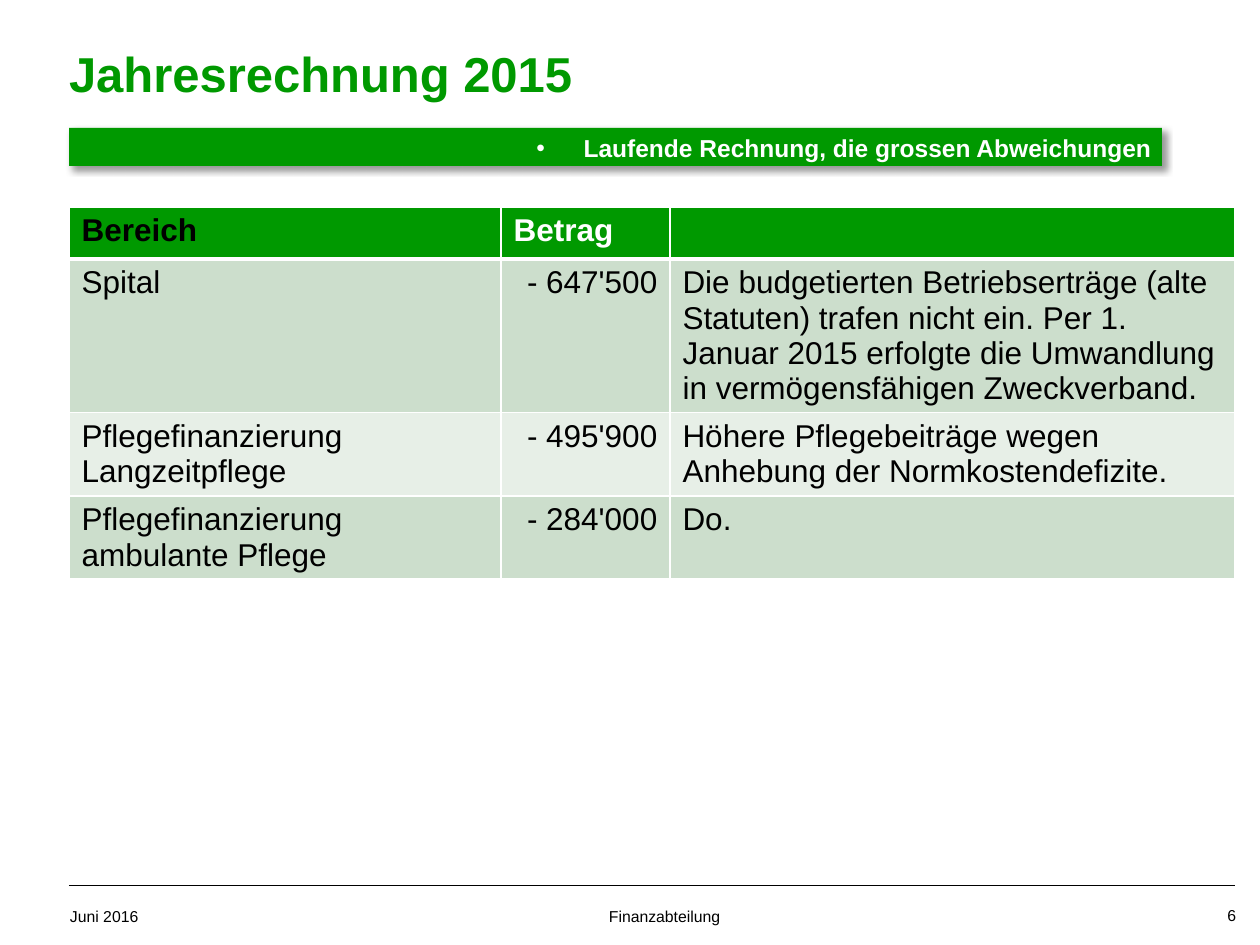
import pptx
import pptx.dml.color
import pptx.enum.shapes
import pptx.enum.text
import pptx.oxml
import pptx.oxml.ns
import pptx.util

PX = 914400 / 126
FONT = "Arial"
COLOURS = {
    "green": "009900",
    "band_dark": "CCDECC",
    "band_light": "E7EFE7",
    "black": "000000",
    "white": "FFFFFF",
}
ALIGN = pptx.enum.text.PP_ALIGN
ANCHOR = pptx.enum.text.MSO_ANCHOR
COLUMN_WIDTHS = [432, 169, 565]
ROW_HEIGHT = 52
ROWS = [
    ("Bereich", "Betrag", ""),
    ("Spital", "- 647'500",
     "Die budgetierten Betriebserträge (alte Statuten) trafen nicht ein. "
     "Per 1. Januar 2015 erfolgte die Umwandlung in vermögensfähigen Zweckverband."),
    ("Pflegefinanzierung Langzeitpflege", "- 495'900",
     "Höhere Pflegebeiträge wegen Anhebung der Normkostendefizite."),
    ("Pflegefinanzierung ambulante Pflege", "- 284'000", "Do."),
]


def px(length):
    return pptx.util.Emu(round(length * PX))


def rgb(name):
    return pptx.dml.color.RGBColor.from_string(COLOURS[name])


def xml(markup):
    """Parse one element of the drawing namespace."""
    tag, rest = markup.split(" ", 1)
    return pptx.oxml.parse_xml(f"{tag} {pptx.oxml.ns.nsdecls('a')} {rest}")


def write(frame, text, *, size, colour="black", bold=False, align=ALIGN.LEFT):
    frame.text = text
    paragraph = frame.paragraphs[0]
    paragraph.alignment = align
    paragraph.space_before = pptx.util.Pt(0)
    font = paragraph.runs[0].font
    font.name, font.size, font.bold = FONT, pptx.util.Pt(size), bold
    font.color.rgb = rgb(colour)


def set_frame(frame, insets, anchor=ANCHOR.TOP):
    frame.word_wrap = True
    frame.auto_size = pptx.enum.text.MSO_AUTO_SIZE.NONE
    frame.vertical_anchor = anchor
    (frame.margin_left, frame.margin_top,
     frame.margin_right, frame.margin_bottom) = map(px, insets)


def place(shape, left, top, width, height):
    shape.left, shape.top = px(left), px(top)
    shape.width, shape.height = px(width), px(height)


def add_title(slide):
    title = slide.shapes.title
    place(title, 69, 24, 1082, 98)
    set_frame(title.text_frame, (0, 6, 13, 6), ANCHOR.MIDDLE)
    write(title.text_frame, "Jahresrechnung 2015", size=28, colour="green", bold=True)


def add_subtitle_bar(slide):
    bar = slide.placeholders[1]
    place(bar, 69, 128, 1093, 38)
    bar.fill.solid()
    bar.fill.fore_color.rgb = rgb("green")
    bar._element.spPr.append(xml(
        '<a:effectLst ><a:outerShdw blurRad="50800" dist="38100" dir="2700000" '
        'algn="tl" rotWithShape="0"><a:srgbClr val="000000"><a:alpha val="40000"/>'
        '</a:srgbClr></a:outerShdw></a:effectLst>'))
    set_frame(bar.text_frame, (0, 5, 10, 0))
    properties = bar.text_frame.paragraphs[0]._p.get_or_add_pPr()
    properties.set("marL", "0")
    properties.set("indent", "0")
    properties.append(xml("<a:buNone />"))
    write(bar.text_frame, "Laufende Rechnung, die grossen Abweichungen",
          size=14, colour="white", bold=True, align=ALIGN.RIGHT)


def set_borders(cell, **widths):
    """Draw white borders, 1 pt unless a side is given another width."""
    properties = cell._tc.get_or_add_tcPr()
    for position, side in enumerate("LRTB"):
        width = pptx.util.Pt(widths.get(side, 1))
        properties.insert(position, xml(
            f'<a:ln{side} w="{width}"><a:solidFill><a:srgbClr val="{COLOURS["white"]}"/>'
            f'</a:solidFill></a:ln{side}>'))


def add_deviations_table(slide):
    table = slide.shapes.add_table(
        len(ROWS), len(COLUMN_WIDTHS), px(69), px(207),
        px(sum(COLUMN_WIDTHS)), px(ROW_HEIGHT * len(ROWS))).table
    for column, width in zip(table.columns, COLUMN_WIDTHS):
        column.width = px(width)
    for r, texts in enumerate(ROWS):
        table.rows[r].height = px(ROW_HEIGHT)
        header = r == 0
        band = "green" if header else "band_dark" if r % 2 else "band_light"
        for c, text in enumerate(texts):
            cell = table.cell(r, c)
            cell.fill.solid()
            cell.fill.fore_color.rgb = rgb(band)
            set_borders(cell, B=3 if header else 1, T=3 if r == 1 else 1)
            if text:
                write(cell.text_frame, text, size=18, bold=header,
                      colour="white" if header and c else "black",
                      align=ALIGN.RIGHT if c == 1 and not header else ALIGN.LEFT)


def add_footer_text(slide, text, box, insets, align):
    frame = slide.shapes.add_textbox(*map(px, box)).text_frame
    set_frame(frame, insets)
    write(frame, text, size=9, align=align)


def add_footer_line(slide):
    line = slide.shapes.add_connector(
        pptx.enum.shapes.MSO_CONNECTOR.STRAIGHT, px(69), px(885), px(1235), px(885))
    line.line.color.rgb = rgb("black")
    line.line.width = pptx.util.Pt(0.5)
    line._element.spPr.append(xml("<a:effectLst />"))


def main():
    deck = pptx.Presentation()
    deck.slide_width, deck.slide_height = px(1260), px(945)
    slide = deck.slides.add_slide(deck.slide_layouts[1])

    # Heading
    add_title(slide)
    add_subtitle_bar(slide)

    # Deviations from the budget
    add_deviations_table(slide)

    # Footer
    add_footer_line(slide)
    add_footer_text(slide, "Juni 2016", (70, 901, 156, 25), (0, 6, 13, 6), ALIGN.LEFT)
    add_footer_text(slide, "Finanzabteilung", (435, 901, 459, 25), (13, 6, 13, 6), ALIGN.CENTER)
    add_footer_text(slide, "6", (1182, 900, 54, 26), (13, 6, 0, 6), ALIGN.RIGHT)

    deck.save("out.pptx")


if __name__ == "__main__":
    main()
